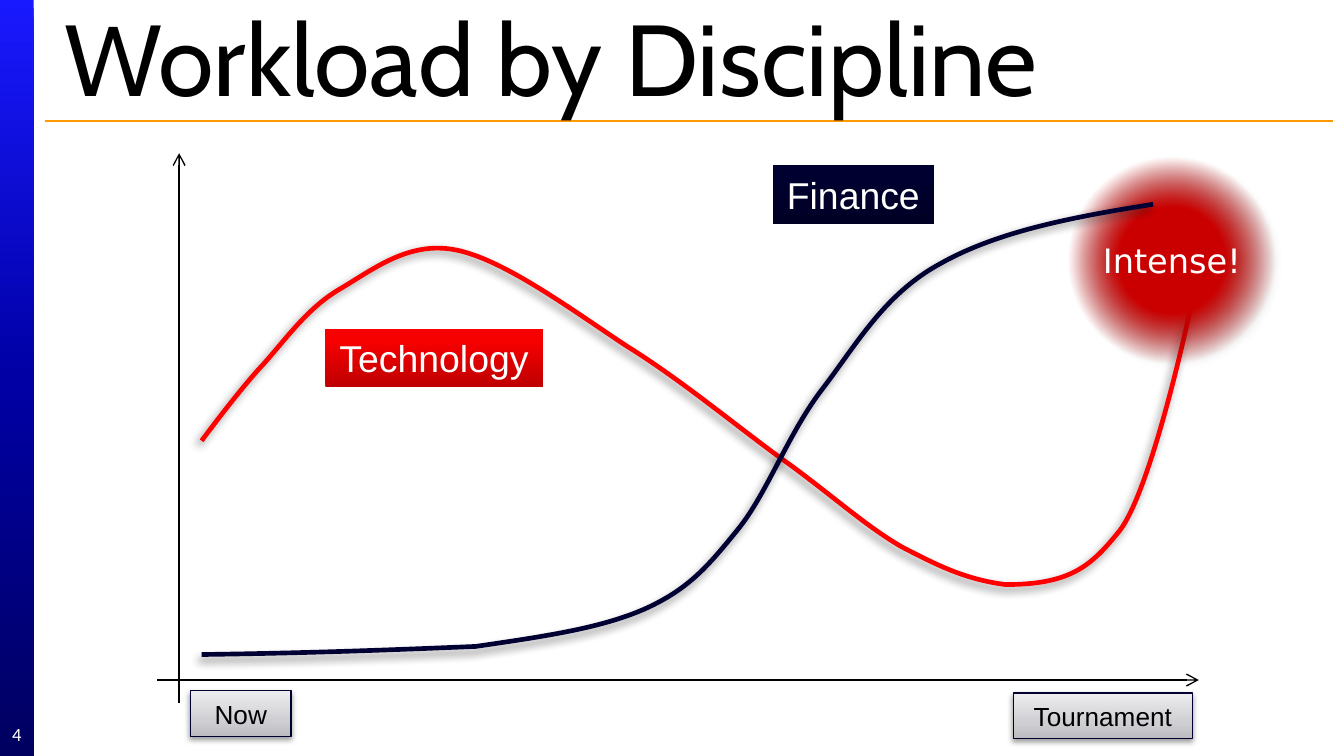
import pptx
import pptx.dml.color
import pptx.enum.shapes
import pptx.enum.text
import pptx.oxml
import pptx.oxml.ns
import pptx.util
from lxml import etree

# All positions are cells of a square grid, 1000 columns wide on a 16:9 slide.
COLUMNS = 1000
ROWS = COLUMNS * 9 / 16
CELL = pptx.util.Inches(10) // COLUMNS

THEME = {
    "heading_font": "Cabin", "label_font": "Arial",
    "number_font": "Calibri", "burst_font": "DejaVu Sans",
    "heading_size": 54, "series_size": 20, "burst_size": 18,
    "milestone_size": 14, "number_size": 10,
    "thin": 0.75, "thick": 2.5,
    "black": "000000", "white": "FFFFFF", "rule": "FF9900",
    "technology": "FF0000", "finance": "000032", "border": "000031",
    # gradient stops: position in percent, colour, opacity in percent
    "sidebar": [(0, "1919FF", 100), (50, "0000A5", 100), (100, "000060", 100)],
    "technology_label": [(0, "BE0000", 100), (80, "F70000", 100), (100, "F80000", 100)],
    "finance_label": [(0, "000025", 100), (80, "000030", 100), (100, "000031", 100)],
    "milestone": [(0, "BBBBC0", 100), (35, "CFCFD3", 100), (100, "EDEDEF", 100)],
    "burst": [(31, "CC0000", 100), (61, "CC0000", 0)],
    # shadows: opacity in percent, blur and distance in points, direction in degrees
    "curve_shadow": (45, 5, 3, 135),
    "milestone_shadow": (38, 3.1, 1.6, 90),
    "burst_shadow": (40, 4, 3, 45),
}

TITLE = ("Workload by Discipline", (38, 15, 958, 53))
PAGE_NUMBER = ("4", (0, 531.5, 25, 30))
SIDEBAR = (0, 0, 25, ROWS)
TITLE_RULE = ((33.3, 90), (992, 90))
AXES = [((117, 506), (892, 506)), ((133.3, 523), (133.3, 114))]
SERIES_LABELS = [
    ("Technology", (242, 244.5, 162, 43.7), "technology_label"),
    ("Finance", (575, 123, 120, 43.7), "finance_label"),
]
MILESTONES = [
    ("Now", (141.7, 514, 75, 34)),
    ("Tournament", (754, 515.6, 133.3, 34)),
]
BURST = ("Intense!", (780.5, 106, 183, 175))
# Each curve: a start, then two control points and an end for every segment.
CURVES = {
    "technology": [
        (150, 328),
        (150, 328), (178, 290), (196, 271),
        (213, 252), (229, 229), (253, 215),
        (277, 201), (304, 179), (339, 186),
        (375, 193), (426, 231), (467, 258),
        (509, 284), (554, 322), (588, 346),
        (622, 371), (645, 392), (671, 407),
        (698, 421), (718, 431), (748, 435),
        (797, 435), (812, 421), (833, 395),
        (854, 368), (879, 263), (888, 219),
    ],
    "finance": [
        (150, 487),
        (225, 486), (282, 484), (354, 481),
        (409, 473), (448, 467), (480, 453),
        (513, 438), (527, 421), (549, 394),
        (571, 367), (587, 321), (613, 288),
        (638, 255), (659, 218), (700, 196),
        (741, 173), (794, 162), (858, 152),
    ],
}

deck = pptx.Presentation()
deck.slide_width, deck.slide_height = COLUMNS * CELL, round(ROWS * CELL)
slide = deck.slides.add_slide(deck.slide_layouts[6])
qn = pptx.oxml.ns.qn


def cells(values):
    return [round(value * CELL) for value in values]


def rgb(name):
    return pptx.dml.color.RGBColor.from_string(THEME[name])


def child(parent, tag, **attributes):
    return etree.SubElement(parent, qn("a:" + tag),
                            {key: str(value) for key, value in attributes.items()})


def add_colour(parent, value, opacity):
    colour = child(parent, "srgbClr", val=value)
    if opacity < 100:
        child(colour, "alpha", val=opacity * 1000)


def set_line(shape, colour, width):
    shape.line.color.rgb = rgb(colour)
    shape.line.width = pptx.util.Pt(THEME[width])


def set_gradient(shape, stops, angle=None):
    """Fill along an angle, or outwards from the centre without one."""
    shape.fill.background()
    properties = shape._element.spPr
    gradient = etree.Element(qn("a:gradFill"), rotWithShape="1")
    stop_list = child(gradient, "gsLst")
    for position, value, opacity in THEME[stops]:
        add_colour(child(stop_list, "gs", pos=position * 1000), value, opacity)
    if angle is None:
        child(child(gradient, "path", path="circle"), "fillToRect",
              l=50000, t=50000, r=50000, b=50000)
    else:
        child(gradient, "lin", ang=angle * 60000, scaled=0)
    properties.replace(properties.find(qn("a:noFill")), gradient)


def set_shadow(shape, name=None):
    shape.shadow.inherit = False
    if name:
        opacity, blur, distance, direction = THEME[name]
        effects = shape._element.spPr.find(qn("a:effectLst"))
        outer = child(effects, "outerShdw", blurRad=pptx.util.Pt(blur),
                      dist=pptx.util.Pt(distance), dir=direction * 60000,
                      rotWithShape=0)
        add_colour(outer, THEME["black"], opacity)


def write(shape, text, role, font, colour, centred=True, wrap=True):
    frame = shape.text_frame
    frame.text = text
    frame.word_wrap = wrap
    frame.vertical_anchor = pptx.enum.text.MSO_ANCHOR.MIDDLE
    paragraph = frame.paragraphs[0]
    align = pptx.enum.text.PP_ALIGN
    paragraph.alignment = align.CENTER if centred else align.LEFT
    letters = paragraph.runs[0].font
    letters.name = THEME[font + "_font"]
    letters.size = pptx.util.Pt(THEME[role + "_size"])
    letters.color.rgb = rgb(colour)


def add_filled(box, stops, angle=None, shadow=None, kind="RECTANGLE"):
    shape = slide.shapes.add_shape(
        getattr(pptx.enum.shapes.MSO_SHAPE, kind), *cells(box))
    set_gradient(shape, stops, angle)
    shape.line.fill.background()
    set_shadow(shape, shadow)
    return shape


def add_line(ends, colour, arrow=False):
    start, end = ends
    line = slide.shapes.add_connector(
        pptx.enum.shapes.MSO_CONNECTOR.STRAIGHT, *cells(start + end))
    set_line(line, colour, "thin")
    properties = line._element.spPr
    if arrow:
        child(properties.find(qn("a:ln")), "tailEnd", type="arrow")
    child(properties, "effectLst")


def add_curve(series):
    """Draw the points as a polyline, then group its segments into Béziers."""
    start, *points = [cells(point) for point in CURVES[series]]
    builder = slide.shapes.build_freeform(*start)
    builder.add_line_segments(points, close=False)
    curve = builder.convert_to_shape()
    outline = next(curve._element.iter(qn("a:path")))
    segments = outline.findall(qn("a:lnTo"))
    for first in range(0, len(segments), 3):
        bezier = child(outline, "cubicBezTo")
        for segment in segments[first:first + 3]:
            bezier.append(segment[0])
            outline.remove(segment)
    curve.fill.background()
    set_line(curve, series, "thick")
    set_shadow(curve, "curve_shadow")


add_filled(SIDEBAR, "sidebar", 90)
add_line(TITLE_RULE, "rule")

title_text, title_box = TITLE
write(slide.shapes.add_textbox(*cells(title_box)), title_text,
      "heading", "heading", "black", centred=False)

number_text, number_box = PAGE_NUMBER
page_number = slide.shapes.add_textbox(*cells(number_box))
write(page_number, number_text, "number", "number", "white")
for side in ("left", "top", "right", "bottom"):
    setattr(page_number.text_frame, "margin_" + side, 0)

for axis in AXES:
    add_line(axis, "black", arrow=True)

add_curve("technology")

for name, box, stops in SERIES_LABELS:
    write(add_filled(box, stops, 270), name, "series", "label", "white", wrap=False)

for name, box in MILESTONES:
    milestone = add_filled(box, "milestone", 270, "milestone_shadow")
    set_line(milestone, "border", "thin")
    write(milestone, name, "milestone", "label", "black")

burst_text, burst_box = BURST
burst = add_filled(burst_box, "burst", shadow="burst_shadow", kind="OVAL")
write(burst, burst_text, "burst", "burst", "white")

add_curve("finance")

deck.save("out.pptx")
